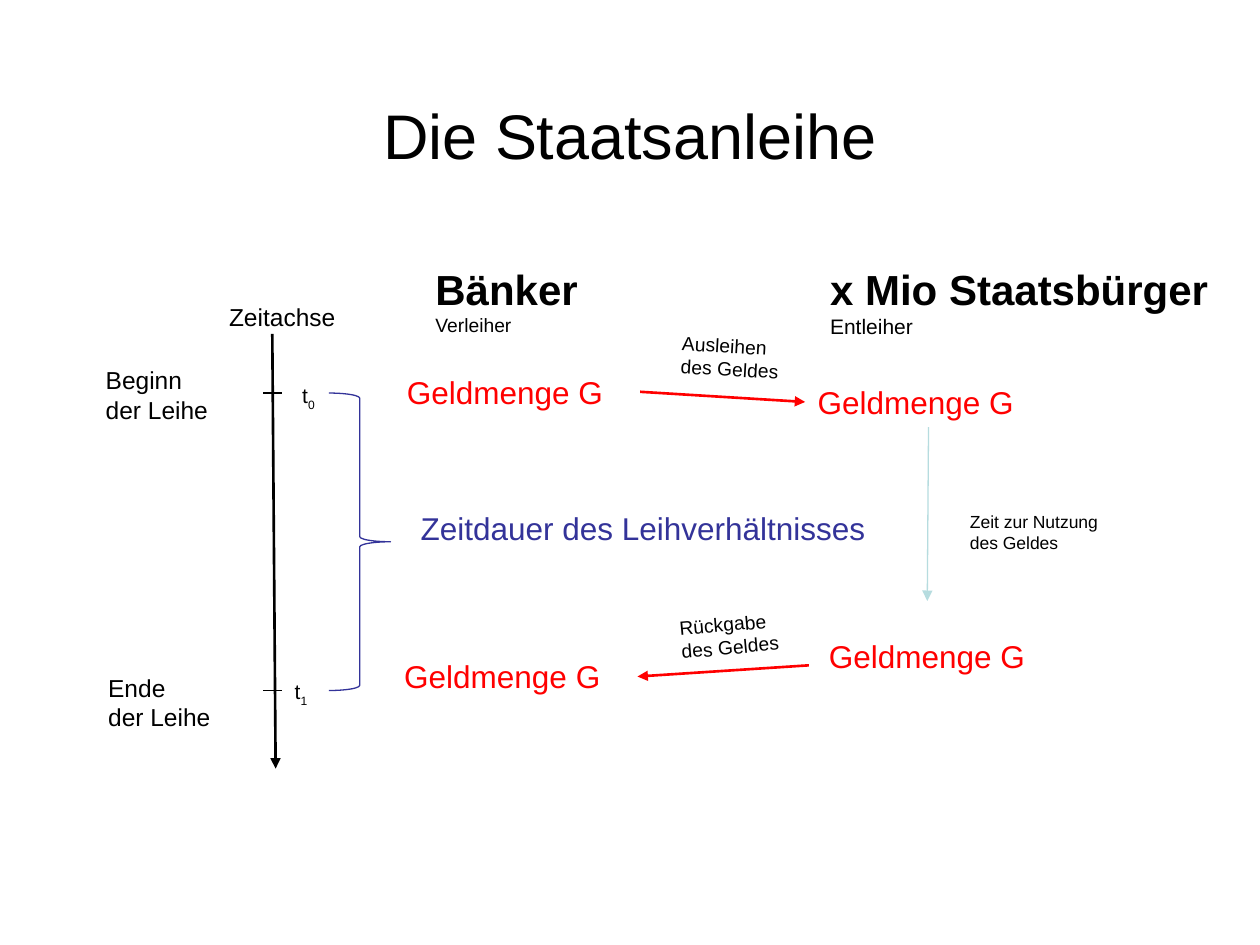
from lxml import etree
from pptx import Presentation
from pptx.dml.color import RGBColor
from pptx.enum import shapes, text
from pptx.oxml import ns
from pptx.util import Pt

BLACK = RGBColor(0x00, 0x00, 0x00)
RED = RGBColor(0xFF, 0x00, 0x00)
INDIGO = RGBColor(0x33, 0x33, 0x99)
PALE_BLUE = RGBColor(0xB6, 0xDC, 0xDF)
FONT = "Arial"


def format_runs(p, size, color=BLACK, bold=False):
    for r in p.runs:
        for name, value in dict(name=FONT, size=Pt(size), bold=bold).items():
            setattr(r.font, name, value)
        r.font.color.rgb = color


def add_title(s, words):
    sp = s.shapes.title
    box = dict(left=36, top=31.7, width=648, height=90)
    for name, value in box.items():
        setattr(sp, name, Pt(value))
    tf = sp.text_frame
    tf.text = words
    tf.vertical_anchor = text.MSO_ANCHOR.MIDDLE
    tf.paragraphs[0].alignment = text.PP_ALIGN.CENTER
    format_runs(tf.paragraphs[0], 36)


def add_text(s, box, paragraphs, color=BLACK, wrap=False, rotation=0):
    """Each paragraph is (words, size) or (words, size, bold)."""
    sp = s.shapes.add_textbox(*map(Pt, box))
    sp.rotation = rotation
    tf = sp.text_frame
    tf.word_wrap = wrap
    tf.auto_size = text.MSO_AUTO_SIZE.SHAPE_TO_FIT_TEXT
    for i, (words, size, *bold) in enumerate(paragraphs):
        p = tf.add_paragraph() if i else tf.paragraphs[0]
        p.text = words
        format_runs(p, size, color, bool(bold and bold[0]))
    return sp


def add_time_mark(s, left, top, index):
    sp = add_text(s, (left, top, 22.3, 21.6), [("t", 12)])
    p = sp.text_frame.paragraphs[0]
    r = p.add_run()
    r.text = index
    format_runs(p, 12)
    r.font._element.set("baseline", "-25000")


def add_line(s, start, end, color=BLACK, width=0.75, arrow=False):
    cx = s.shapes.add_connector(
        shapes.MSO_CONNECTOR.STRAIGHT, *map(Pt, (*start, *end)))
    cx.line.color.rgb = color
    cx.line.width = Pt(width)
    if arrow:
        ln = cx.line._get_or_add_ln()
        etree.SubElement(ln, ns.qn("a:tailEnd"), type="triangle")
    etree.SubElement(cx._element.spPr, ns.qn("a:effectLst"))


def add_brace(s, box):
    sp = s.shapes.add_shape(shapes.MSO_SHAPE.RIGHT_BRACE, *map(Pt, box))
    sp.shadow.inherit = False
    sp.fill.background()
    sp.line.color.rgb = INDIGO
    sp.line.width = Pt(0.75)


def main():
    prs = Presentation()
    prs.slide_width, prs.slide_height = Pt(720), Pt(540)
    s = prs.slides.add_slide(prs.slide_layouts[5])
    add_title(s, "Die Staatsanleihe")

    add_text(s, (241.7, 146.9, 96.5, 49.7),
             [("Bänker", 24, True), ("Verleiher", 11)])
    add_text(s, (467.3, 146.9, 232.6, 51.1),
             [("x Mio Staatsbürger", 24, True), ("Entleiher", 12)])

    # Time axis with the start and end of the loan
    start_y, end_y = 224.6, 394.6
    add_text(s, (123.8, 169.2, 75.6, 24.5), [("Zeitachse", 14)])
    add_line(s, (155.6, 190.8), (157.5, 439.2), width=1.5, arrow=True)
    for y in (start_y, end_y):
        add_line(s, (150.5, y), (161.3, y))
    add_time_mark(s, 165.6, 215.3, "0")
    add_time_mark(s, 161.3, 384.5, "1")
    add_text(s, (53.3, 205.2, 73.4, 41), [("Beginn\vder Leihe", 14)])
    add_text(s, (54.7, 380.9, 73.4, 41), [("Ende\vder Leihe", 14)])
    add_brace(s, (187.9, start_y, 35.3, end_y - start_y))
    add_text(s, (233.3, 287.3, 270.7, 28.8),
             [("Zeitdauer des Leihverhältnisses", 18)], INDIGO)

    # Money lent, used and returned
    for left, top in ((225.4, 209.5), (460.1, 215.3),
                      (466.6, 360.7), (223.9, 372.2)):
        add_text(s, (left, top, 140.4, 28.8), [("Geldmenge G", 18)],
                 RED, wrap=True)
    add_line(s, (365.8, 223.9), (460.1, 229.7), RED, 1.5, arrow=True)
    add_line(s, (462.2, 380.2), (364.3, 386.6), RED, 1.5, arrow=True)
    add_line(s, (530.6, 244.1), (529.9, 343.4), PALE_BLUE, arrow=True)
    for box, words, size, rotation in (
            ((382.3, 187.9, 90.7, 33.8), "Ausleihen", 11, 3.3),
            ((547.2, 288.7, 108, 31.7), "Zeit zur Nutzung", 10, 0),
            ((381.6, 345.6, 85, 33.8), "Rückgabe", 11, 354.7)):
        add_text(s, box, [(words, size), ("des Geldes", size)],
                 wrap=True, rotation=rotation)

    prs.save("out.pptx")


if __name__ == "__main__":
    main()
